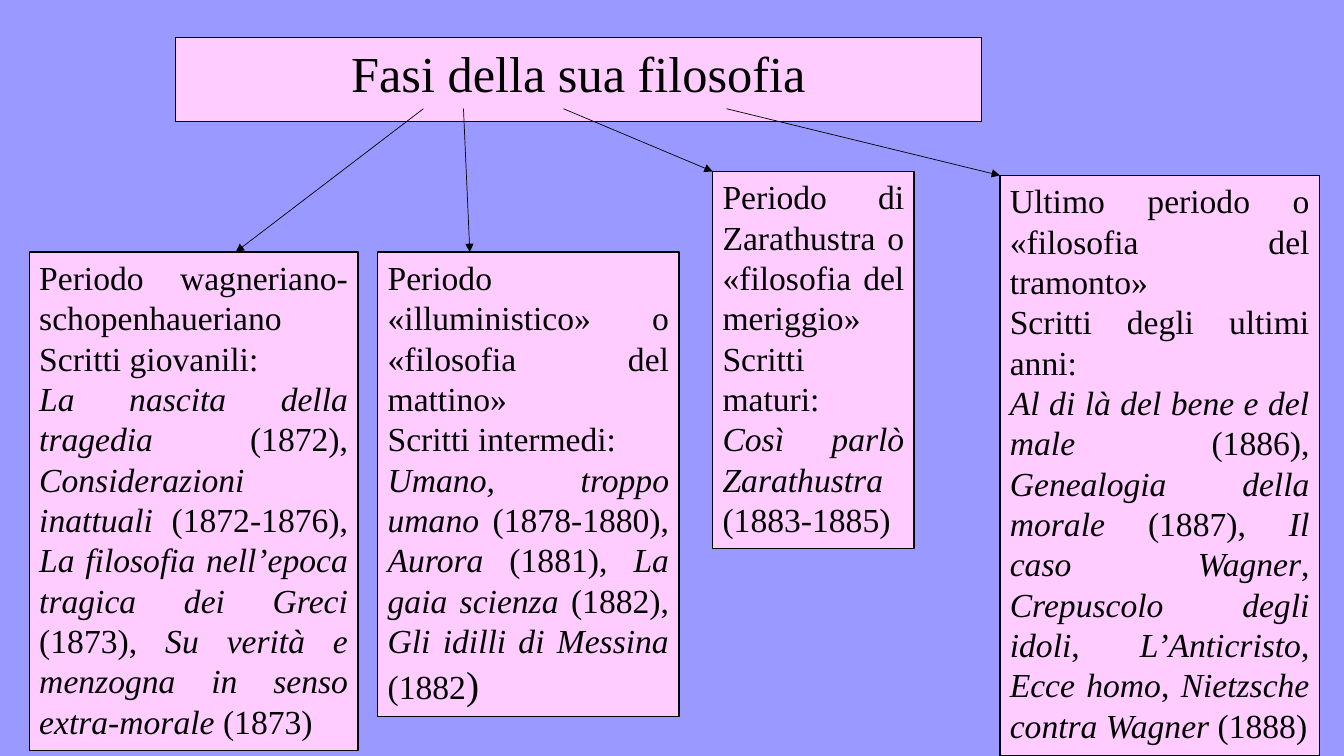
from lxml import etree
from pptx import Presentation
from pptx.dml.color import RGBColor
from pptx.enum.shapes import MSO_CONNECTOR, MSO_SHAPE
from pptx.enum.text import MSO_ANCHOR, MSO_AUTO_SIZE, PP_ALIGN
from pptx.oxml.ns import qn
from pptx.util import Cm, Pt

INK, PINK, LILAC = "000000", "FFCCFF", "9999FF"


def rgb(value):
    return RGBColor.from_string(value)


def add_text(p, text, size=24, align=PP_ALIGN.JUSTIFY, font="Times New Roman", color=INK):
    """Add text to a paragraph; asterisks enclose italics."""
    p.alignment = align
    for i, part in enumerate(text.split("*")):
        if part:
            r = p.add_run()
            r.text = part
            r.font.name = font
            r.font.size = Pt(size)
            r.font.italic = i % 2 == 1
            r.font.color.rgb = rgb(color)


prs = Presentation()
prs.slide_width, prs.slide_height = Cm(33.87), Cm(19.05)
s = prs.slides.add_slide(prs.slide_layouts[5])
s.background.fill.solid()
s.background.fill.fore_color.rgb = rgb(LILAC)

# Title
title = s.shapes.title
title.left, title.top, title.width, title.height = Cm(4.42), Cm(0.94), Cm(20.32), Cm(1.8)
add_text(title.text_frame.paragraphs[0], "Fasi della sua filosofia", size=36, align=PP_ALIGN.CENTER)

# Periods: left, top, width, height, paragraphs
periods = [
    (0.74, 6.35, 8.28, 12.57, [
        "Periodo wagneriano-schopenhaueriano",
        "Scritti giovanili:",
        "*La nascita della tragedia *(1872), *Considerazioni inattuali *(1872-1876), "
        "*La filosofia nell’epoca tragica dei Greci *(1873), "
        "*Su verità e menzogna in senso extra-morale *(1873)"]),
    (9.52, 6.35, 7.59, 11.71, [
        "Periodo «illuministico» o «filosofia del mattino»",
        "Scritti intermedi:",
        "*Umano, troppo umano *(1878-1880), *Aurora* (1881), "
        "*La gaia scienza *(1882), *Gli idilli di Messina *(1882"]),
    (17.96, 4.32, 5.08, 9.5, [
        "Periodo di Zarathustra o «filosofia del meriggio»",
        "Scritti maturi:",
        "*Così parlò Zarathustra *(1883-1885)"]),
    (25.2, 4.42, 8.05, 14.63, [
        "Ultimo periodo o «filosofia del tramonto»",
        "Scritti degli ultimi anni:",
        "*Al di là del bene e del male *(1886), *Genealogia della morale *(1887), "
        "*Il caso Wagner*, *Crepuscolo degli idoli*, *L’Anticristo*, *Ecce homo*, "
        "*Nietzsche contra Wagner *(1888)"]),
]
boxes = []
for left, top, width, height, lines in periods:
    sp = s.shapes.add_shape(MSO_SHAPE.RECTANGLE, Cm(left), Cm(top), Cm(width), Cm(height))
    sp.shadow.inherit = False
    tf = sp.text_frame
    for i, line in enumerate(lines):
        add_text(tf.add_paragraph() if i else tf.paragraphs[0], line)
    boxes.append(sp)

# The second period closes with a larger bracket
add_text(boxes[1].text_frame.paragraphs[-1], ")", size=28)

# Shared box format
for sp in [title, *boxes]:
    sp.fill.solid()
    sp.fill.fore_color.rgb = rgb(PINK)
    sp.line.color.rgb = rgb(INK)
    sp.line.width = Pt(1)
    tf = sp.text_frame
    tf.word_wrap = True
    tf.auto_size = MSO_AUTO_SIZE.SHAPE_TO_FIT_TEXT
    tf.vertical_anchor = MSO_ANCHOR.TOP

# Arrows from the title to each period: start x, end x, end y
title_bottom = 2.74
for x1, x2, y2 in [(10.67, 5.94, 6.35), (11.68, 11.84, 6.35),
                   (14.2, 17.96, 4.32), (18.31, 25.2, 4.42)]:
    arrow = s.shapes.add_connector(
        MSO_CONNECTOR.STRAIGHT, Cm(x1), Cm(title_bottom), Cm(x2), Cm(y2))
    arrow.line.color.rgb = rgb(INK)
    arrow.line.width = Pt(0.5)
    etree.SubElement(arrow.line._get_or_add_ln(), qn("a:tailEnd"), type="triangle")
    etree.SubElement(arrow._element.spPr, qn("a:effectLst"))

prs.save("out.pptx")
